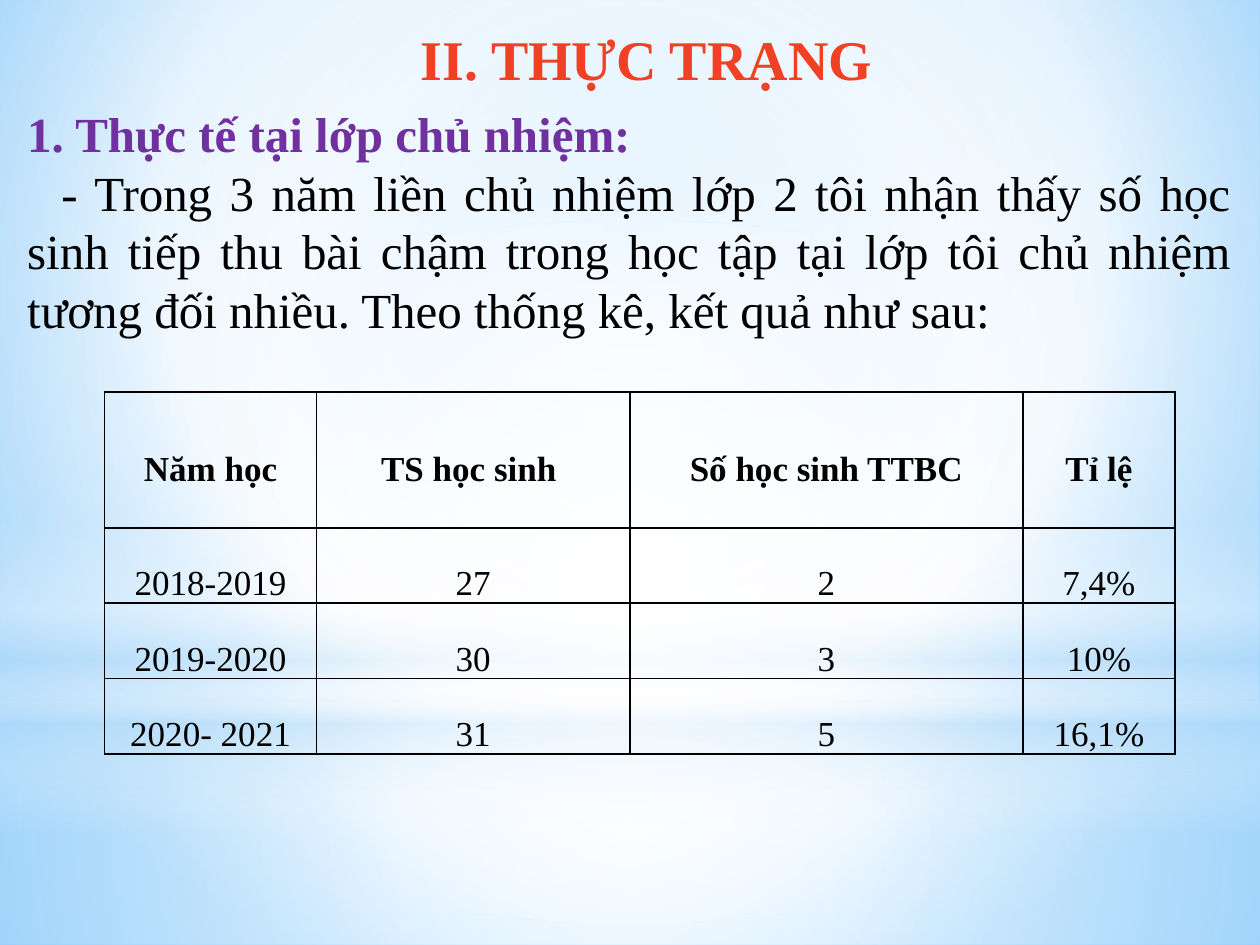
from dataclasses import dataclass

from pptx import Presentation
from pptx.dml.color import RGBColor
from pptx.enum.shapes import MSO_SHAPE
from pptx.enum.text import MSO_ANCHOR, MSO_AUTO_SIZE, PP_ALIGN
from pptx.oxml import parse_xml
from pptx.oxml.ns import nsdecls, qn
from pptx.util import Cm, Pt

RECTANGLE, OVAL = MSO_SHAPE.RECTANGLE, MSO_SHAPE.OVAL
CENTER, JUSTIFY = PP_ALIGN.CENTER, PP_ALIGN.JUSTIFY
TOP, MIDDLE, BOTTOM = MSO_ANCHOR.TOP, MSO_ANCHOR.MIDDLE, MSO_ANCHOR.BOTTOM
FIT_SHAPE = MSO_AUTO_SIZE.SHAPE_TO_FIT_TEXT

FONT = "Times New Roman"
WIDTH, HEIGHT = 25.4, 19.05
WHITE, SKY, BLACK = "FFFFFF", "B4DCFA", "000000"
CENTER_POINT = (50, 50, 50, 50)

Box = tuple[float, float, float, float]


@dataclass
class Gradient:
    stops: list[tuple[int, str, int]]  # position %, colour, opacity %
    focus: Box | None = CENTER_POINT  # None gives a vertical linear gradient


@dataclass
class Glow:
    kind: MSO_SHAPE
    box: Box
    gradient: Gradient


@dataclass
class Line:
    text: str
    size: int
    color: str
    bold: bool = False
    align: PP_ALIGN = JUSTIFY
    indent: float = 0


BACKDROP = Gradient([(0, "9ED5FF", 100), (60, WHITE, 100), (100, "5BB9FF", 100)],
                    (20, 10, 20, 60))
GLOWS = [
    Glow(RECTANGLE, (0, 14.17, WIDTH, 4.88),
         Gradient([(0, WHITE, 91), (37, WHITE, 76), (100, SKY, 79)])),
    Glow(RECTANGLE, (0, 0, WIDTH, 14.17),
         Gradient([(0, WHITE, 89), (48, WHITE, 62), (100, SKY, 79)])),
    Glow(RECTANGLE, (0, 10.46, WIDTH, 6.35),
         Gradient([(0, WHITE, 0), (29, WHITE, 30), (45, SKY, 40),
                   (55, WHITE, 26), (65, SKY, 60), (100, WHITE, 0)], None)),
    Glow(OVAL, (0, 4.45, WIDTH, 14.17),
         Gradient([(0, WHITE, 100), (56, WHITE, 0)])),
]

TITLE = [Line("II. THỰC TRẠNG", 32, "F14124", True, CENTER)]
BODY = [
    Line("1. Thực tế tại lớp chủ nhiệm:", 28, "7030A0", True),
    Line("- Trong 3 năm liền chủ nhiệm lớp 2 tôi nhận thấy số học sinh tiếp thu "
         "bài chậm trong học tập tại lớp tôi chủ nhiệm tương đối nhiều. "
         "Theo thống kê, kết quả như sau:", 28, BLACK, indent=0.69),
]

COLUMN_WIDTHS = [4.27, 6.32, 7.92, 3.07]
ROW_HEIGHTS = [2.74, 1.52, 1.52, 1.52]
RESULTS = [
    ["Năm học", "TS học sinh ", "Số học sinh TTBC", "Tỉ lệ"],
    ["2018-2019", "27", "2", "7,4%"],
    ["2019-2020", "30", "3", "10%"],
    ["2020- 2021", "31", "5", "16,1%"],
]


def color(value: str) -> RGBColor:
    return RGBColor.from_string(value)


def set_all(target, values: dict) -> None:
    for name, value in values.items():
        setattr(target, name, value)


def apply_gradient(properties, gradient: Gradient) -> None:
    """Put the gradient in place of the solid fill of the properties element."""
    stops = "".join(
        f'<a:gs pos="{position * 1000}"><a:srgbClr val="{color(value)}">'
        f'<a:alpha val="{opacity * 1000}"/></a:srgbClr></a:gs>'
        for position, value, opacity in gradient.stops)
    if gradient.focus is None:
        direction = '<a:lin ang="5400000" scaled="0"/>'
    else:
        sides = " ".join(f'{side}="{value * 1000}"'
                         for side, value in zip("ltrb", gradient.focus))
        direction = f'<a:path path="circle"><a:fillToRect {sides}/></a:path>'
    fill = parse_xml(f'<a:gradFill {nsdecls("a")} rotWithShape="1">'
                     f'<a:gsLst>{stops}</a:gsLst>{direction}</a:gradFill>')
    properties.replace(properties.find(qn("a:solidFill")), fill)


def add_glow(slide, glow: Glow) -> None:
    shape = slide.shapes.add_shape(glow.kind, *map(Cm, glow.box))
    shape.shadow.inherit = False
    shape.line.fill.background()
    shape.fill.solid()
    apply_gradient(shape.element.spPr, glow.gradient)


def write_line(paragraph, line: Line) -> None:
    paragraph.alignment = line.align
    if line.indent:
        paragraph._p.get_or_add_pPr().set("indent", str(Cm(line.indent)))
    run = paragraph.add_run()
    run.text = line.text
    set_all(run.font, {"name": FONT, "size": Pt(line.size), "bold": line.bold})
    run.font.color.rgb = color(line.color)


def add_text(slide, box: Box, lines: list[Line], anchor: MSO_ANCHOR) -> None:
    frame = slide.shapes.add_textbox(*map(Cm, box)).text_frame
    set_all(frame, {"word_wrap": True, "auto_size": FIT_SHAPE,
                    "vertical_anchor": anchor})
    for index, line in enumerate(lines):
        write_line(frame.add_paragraph() if index else frame.paragraphs[0], line)


def add_borders(cell) -> None:
    properties = cell._tc.get_or_add_tcPr()
    for index, side in enumerate(("lnL", "lnR", "lnT", "lnB")):
        properties.insert(index, parse_xml(
            f'<a:{side} {nsdecls("a")} w="{Pt(1)}"><a:solidFill>'
            f'<a:srgbClr val="{color(BLACK)}"/></a:solidFill></a:{side}>'))


def add_results(slide, left: float, top: float) -> None:
    size = sum(COLUMN_WIDTHS), sum(ROW_HEIGHTS)
    table = slide.shapes.add_table(len(RESULTS), len(COLUMN_WIDTHS),
                                   *map(Cm, (left, top, *size))).table
    set_all(table, {"first_row": False, "horz_banding": False})
    for column, width in zip(table.columns, COLUMN_WIDTHS):
        column.width = Cm(width)
    for index, (row, height) in enumerate(zip(table.rows, ROW_HEIGHTS)):
        row.height = Cm(height)
        header = index == 0
        for cell, text in zip(row.cells, RESULTS[index]):
            set_all(cell, {"margin_left": Cm(0.18), "margin_right": Cm(0.18),
                           "margin_top": 0, "margin_bottom": 0,
                           "vertical_anchor": MIDDLE if header else BOTTOM})
            cell.fill.background()
            add_borders(cell)
            paragraph = cell.text_frame.paragraphs[0]
            paragraph.line_spacing = 1.5
            write_line(paragraph, Line(text, 20, BLACK, header, CENTER))


def main() -> None:
    presentation = Presentation()
    set_all(presentation, {"slide_width": Cm(WIDTH), "slide_height": Cm(HEIGHT)})
    slide = presentation.slides.add_slide(presentation.slide_layouts[6])

    # Background and soft glows
    slide.background.fill.solid()
    apply_gradient(next(slide.element.iter(qn("p:bgPr"))), BACKDROP)
    for glow in GLOWS:
        add_glow(slide, glow)

    # Heading and introduction
    add_text(slide, (4.88, 0.36, 16.31, 1.63), TITLE, TOP)
    add_text(slide, (0.3, 1.93, 24.77, 5.05), BODY, MIDDLE)

    # Results by school year
    add_results(slide, 2.11, 7.9)

    presentation.save("out.pptx")


if __name__ == "__main__":
    main()
